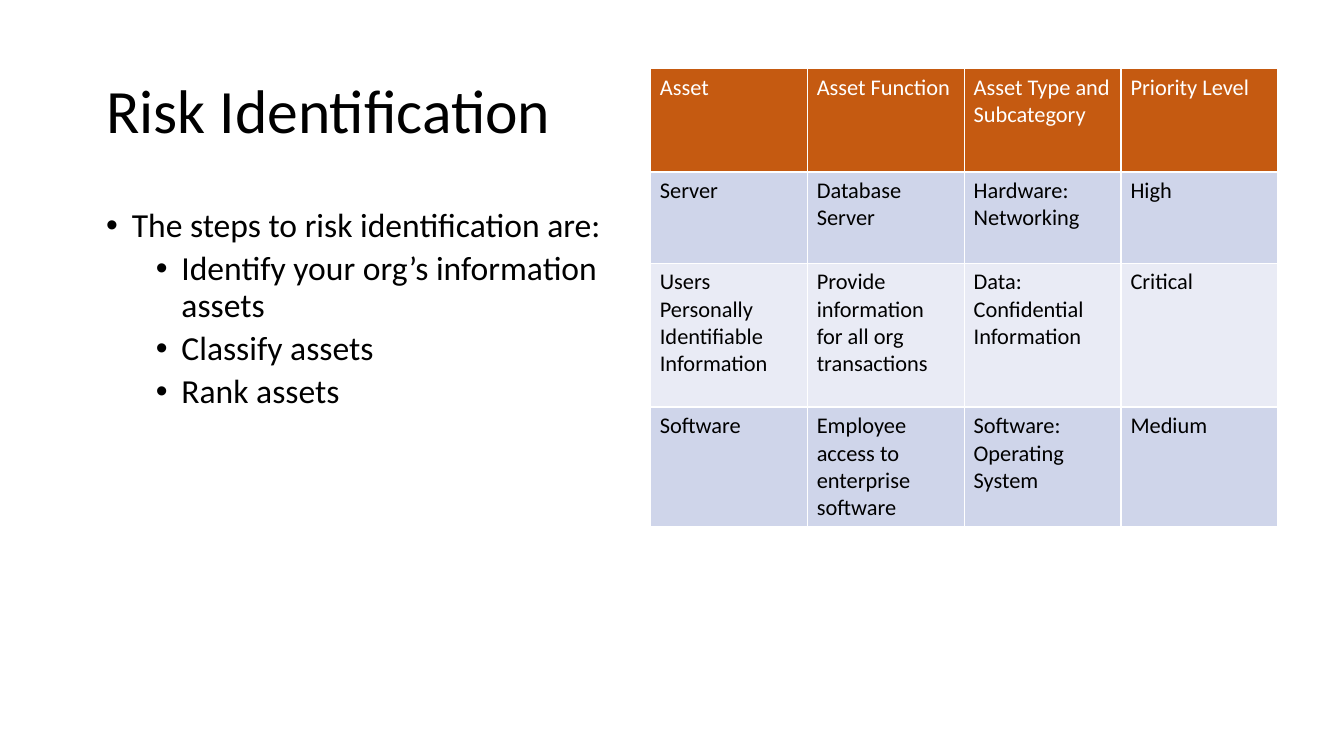
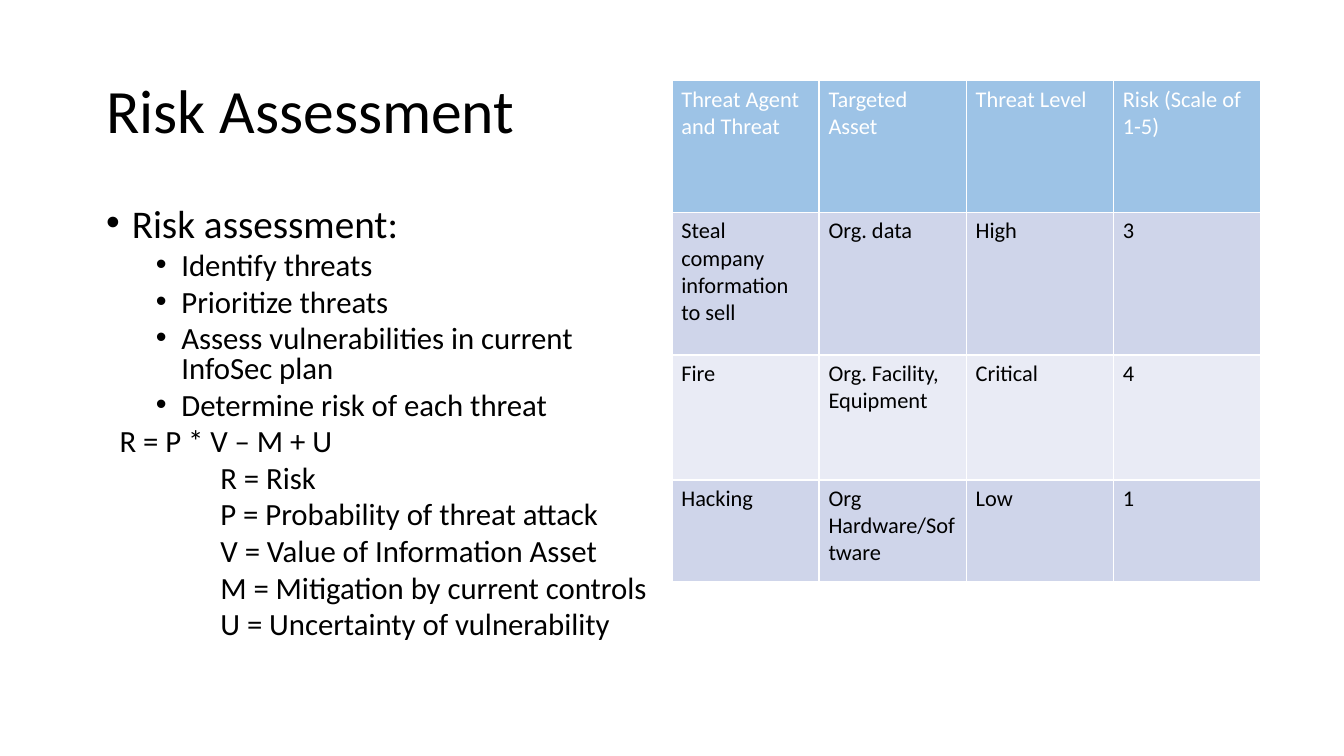
from dataclasses import dataclass
from typing import Any

from lxml import etree
from pptx import Presentation
from pptx.dml.color import RGBColor
from pptx.enum.text import MSO_ANCHOR, MSO_AUTO_SIZE, PP_ALIGN
from pptx.oxml.ns import qn
from pptx.util import Inches, Pt

LEFT = PP_ALIGN.LEFT
TOP, MIDDLE = MSO_ANCHOR.TOP, MSO_ANCHOR.MIDDLE
NO_FIT = MSO_AUTO_SIZE.NONE

# Shared look
FONT = "Calibri"
BLACK = RGBColor(0x00, 0x00, 0x00)
WHITE = RGBColor(0xFF, 0xFF, 0xFF)
ORANGE = RGBColor(0xC5, 0x5A, 0x11)
SKY = RGBColor(0x9D, 0xC3, 0xE6)
BAND_DARK = RGBColor(0xCF, 0xD5, 0xEA)
BAND_LIGHT = RGBColor(0xE9, 0xEB, 0xF5)

SLIDE_WIDTH = Inches(10)
SLIDE_HEIGHT = SLIDE_WIDTH * 9 // 16
TITLE_BOX = (0.69, 0.3, 8.62, 1.09)
BODY_BOX = (0.69, 1.5, 4.25, 3.57)
TITLE_FRAME = {"word_wrap": True, "auto_size": NO_FIT, "vertical_anchor": MIDDLE}
BODY_FRAME = {"word_wrap": True, "auto_size": NO_FIT, "vertical_anchor": TOP}
CELL_FORMAT = {"margin_left": Inches(0.07), "margin_right": Inches(0.07),
               "margin_top": Inches(0.04), "margin_bottom": Inches(0.04),
               "vertical_anchor": TOP}


@dataclass(frozen=True)
class ListStyle:
    level: int
    margin: float
    hanging: float
    space_before: float


MAIN = ListStyle(0, 0.19, 0.19, 7.5)
SUB = ListStyle(1, 0.56, 0.19, 3.8)
FORMULA = ListStyle(1, 0.1, 0, 3.8)
TERM = ListStyle(1, 0.85, 0, 3.8)


@dataclass(frozen=True)
class ListItem:
    text: str
    style: ListStyle
    size: float


@dataclass(frozen=True)
class RiskTable:
    left: float
    top: float
    width: float
    row_heights: list[float]
    header_fill: RGBColor
    rows: list[list[str]]


@dataclass(frozen=True)
class RiskSlide:
    title: str
    line_spacing: float
    items: list[ListItem]
    table: RiskTable


SLIDES = [
    RiskSlide(
        "Risk Identification", 0.9,
        [ListItem("The steps to risk identification are:", MAIN, 18)]
        + [ListItem(text, SUB, 18) for text in (
            "Identify your org’s information assets",
            "Classify assets",
            "Rank assets")],
        RiskTable(4.84, 0.51, 4.67, [0.77, 0.68, 1.07, 0.88], ORANGE, [
            ["Asset", "Asset Function", "Asset Type and Subcategory", "Priority Level"],
            ["Server", "Database Server", "Hardware: Networking", "High"],
            ["Users Personally Identifiable Information",
             "Provide information for all org transactions",
             "Data: Confidential Information", "Critical"],
            ["Software", "Employee access to enterprise software",
             "Software: Operating System", "Medium"],
        ])),
    RiskSlide(
        "Risk Assessment", 0.8,
        [ListItem("Risk assessment:", MAIN, 21)]
        + [ListItem(text, SUB, 16.5) for text in (
            "Identify threats",
            "Prioritize threats",
            "Assess vulnerabilities in current InfoSec plan",
            "Determine risk of each threat")]
        + [ListItem("R = P * V – M + U", FORMULA, 16.5)]
        + [ListItem(text, TERM, 16.5) for text in (
            "R = Risk",
            "P = Probability of threat attack",
            "V = Value of Information Asset",
            "M = Mitigation by current controls",
            "U = Uncertainty of vulnerability")],
        RiskTable(5, 0.6, 4.38, [0.98, 1.06, 0.93, 0.76], SKY, [
            ["Threat Agent and Threat", "Targeted Asset", "Threat Level",
             "Risk (Scale of 1-5)"],
            ["Steal company information\nto sell", "Org. data", "High", "3"],
            ["Fire", "Org. Facility, Equipment", "Critical", "4"],
            ["Hacking", "Org Hardware/Software", "Low", "1"],
        ])),
]


def apply_format(target: Any, values: dict[str, Any]) -> None:
    for name, value in values.items():
        setattr(target, name, value)


def format_text(p: Any, size: float, color: RGBColor) -> None:
    for r in p.runs:
        apply_format(r.font, {"name": FONT, "size": Pt(size), "bold": False})
        r.font.color.rgb = color


def place(sp: Any, box: tuple[float, ...]) -> None:
    names = ("left", "top", "width", "height")
    apply_format(sp, dict(zip(names, map(Inches, box))))


def set_bullet(p: Any, style: ListStyle) -> None:
    p_pr = p._p.get_or_add_pPr()
    p_pr.set("marL", str(Inches(style.margin)))
    p_pr.set("indent", str(-Inches(style.hanging)))
    if style.hanging:
        etree.SubElement(p_pr, qn("a:buFont"), typeface="Arial")
        etree.SubElement(p_pr, qn("a:buChar"), char="•")
    else:
        etree.SubElement(p_pr, qn("a:buNone"))


def add_title(s: Any, text: str) -> None:
    sp = s.shapes.title
    place(sp, TITLE_BOX)
    tf = sp.text_frame
    tf.text = text
    apply_format(tf, TITLE_FRAME)
    p = tf.paragraphs[0]
    apply_format(p, {"alignment": LEFT, "line_spacing": 0.9})
    format_text(p, 33, BLACK)


def add_list(s: Any, items: list[ListItem], line_spacing: float) -> None:
    sp = s.placeholders[1]
    place(sp, BODY_BOX)
    tf = sp.text_frame
    tf.text = "\n".join(item.text for item in items)
    apply_format(tf, BODY_FRAME)
    for i, (p, item) in enumerate(zip(tf.paragraphs, items)):
        set_bullet(p, item.style)
        space = item.style.space_before if i else 0
        apply_format(p, {"level": item.style.level, "alignment": LEFT,
                         "line_spacing": line_spacing, "space_before": Pt(space)})
        format_text(p, item.size, BLACK)


def set_borders(cell: Any) -> None:
    tc_pr = cell._tc.get_or_add_tcPr()
    for side in "LRTB":
        ln = etree.SubElement(tc_pr, qn(f"a:ln{side}"), w=str(Pt(1)))
        fill = etree.SubElement(ln, qn("a:solidFill"))
        etree.SubElement(fill, qn("a:srgbClr"), val=str(WHITE))


def add_risk_table(s: Any, risks: RiskTable) -> None:
    columns = len(risks.rows[0])
    frame = s.shapes.add_table(
        len(risks.rows), columns, Inches(risks.left), Inches(risks.top),
        Inches(risks.width), Inches(sum(risks.row_heights)))
    table = frame.table
    table.horz_banding = False
    for column in table.columns:
        column.width = Inches(risks.width / columns)
    for i, (height, texts) in enumerate(zip(risks.row_heights, risks.rows)):
        table.rows[i].height = Inches(height)
        band = BAND_DARK if i % 2 else BAND_LIGHT
        for j, text in enumerate(texts):
            cell = table.cell(i, j)
            cell.text = text
            apply_format(cell, CELL_FORMAT)
            set_borders(cell)
            cell.fill.solid()
            cell.fill.fore_color.rgb = band if i else risks.header_fill
            for p in cell.text_frame.paragraphs:
                format_text(p, 12, BLACK if i else WHITE)


def main() -> None:
    prs = Presentation()
    apply_format(prs, {"slide_width": SLIDE_WIDTH, "slide_height": SLIDE_HEIGHT})
    for content in SLIDES:
        s = prs.slides.add_slide(prs.slide_layouts[1])
        add_title(s, content.title)
        add_list(s, content.items, content.line_spacing)
        add_risk_table(s, content.table)
    prs.save("out.pptx")


if __name__ == "__main__":
    main()
